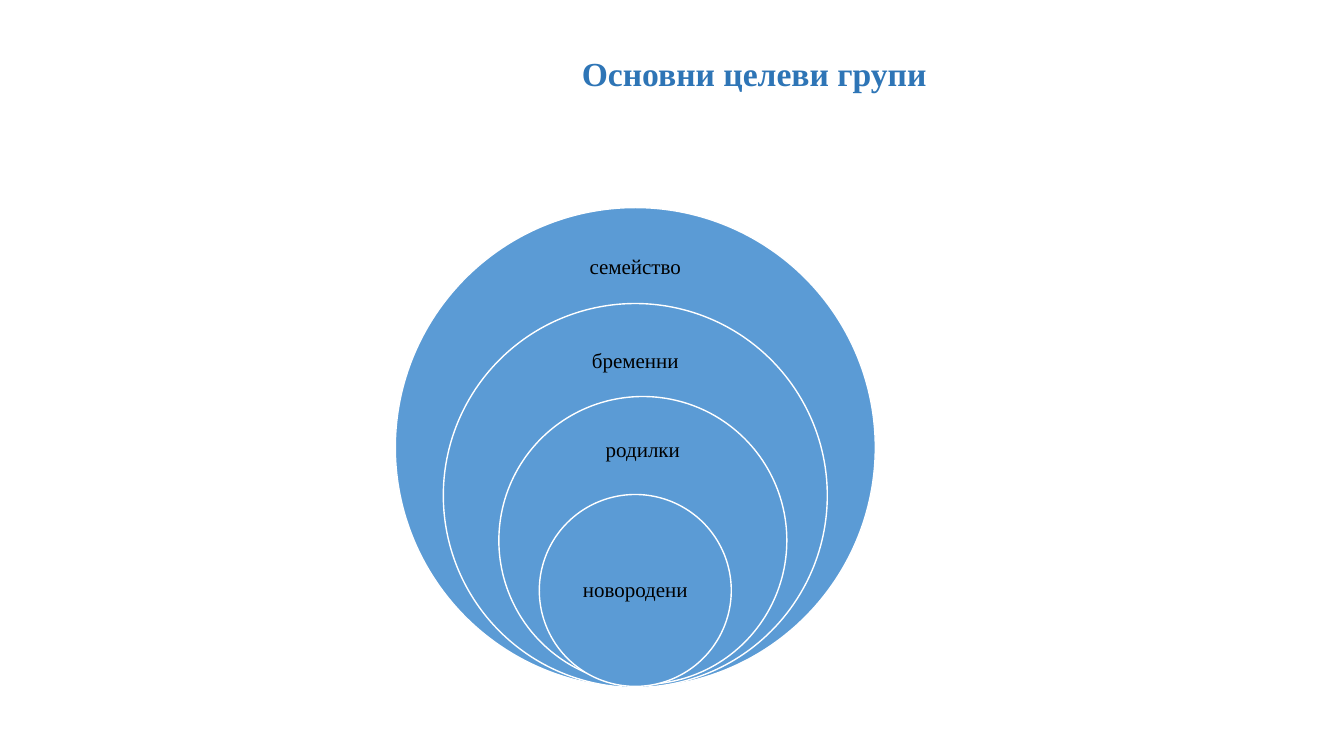
"""Builds a slide of nested circles showing the main target groups."""
from pptx import Presentation
from pptx import util as u
from pptx.dml import color
from pptx.enum import shapes, text

COLOURS = {"title": "2E75B6", "ring": "5B9BD5", "outline": "FFFFFF", "label": "000000"}
OUTER_DIAMETER = 63.47
RINGS = [
    ("семейство", 1.0, 47.27, 90.93, 35.4, 9.47),
    ("бременни", 0.8, 47.27, 90.93, 47.8, 9.2),
    ("родилки", 0.6, 47.83, 90.53, 59.6, 8.53),
    ("новородени", 0.4, 47.27, 90.8, 78.2, 12.67),
]


class SlideBuilder:
    """Holds the style and the slide; lengths are percentages of the slide's size."""

    font_name = "Times New Roman"

    def __init__(self, presentation):
        self.width = presentation.slide_width
        self.height = presentation.slide_height
        self.slide = presentation.slides.add_slide(presentation.slide_layouts[5])
        self.group = self.slide.shapes.add_group_shape()

    def across(self, share):
        return u.Emu(round(self.width * share / 100))

    def down(self, share):
        return u.Emu(round(self.height * share / 100))

    def set_wording(self, shape, wording, size, colour, bold=False):
        frame = shape.text_frame
        frame.text = wording
        frame.word_wrap = True
        frame.auto_size = text.MSO_AUTO_SIZE.NONE
        paragraph = frame.paragraphs[0]
        paragraph.alignment = text.PP_ALIGN.CENTER
        paragraph.line_spacing = 0.9
        for run in paragraph.runs:
            run.font.name = self.font_name
            run.font.size = u.Pt(size)
            run.font.bold = bold
            run.font.color.rgb = color.RGBColor.from_string(COLOURS[colour])
        return frame

    def title(self, wording, left, top, width, height):
        shape = self.slide.shapes.title
        shape.left, shape.top = self.across(left), self.down(top)
        shape.width, shape.height = self.across(width), self.down(height)
        frame = self.set_wording(shape, wording, 24, "title", bold=True)
        frame.vertical_anchor = text.MSO_ANCHOR.TOP
        frame.margin_top = u.Inches(0.17)

    def ring(self, centre, bottom, diameter):
        size = self.down(diameter)
        shape = self.group.shapes.add_shape(
            shapes.MSO_SHAPE.OVAL, self.across(centre) - size // 2,
            self.down(bottom) - size, size, size)
        shape.shadow.inherit = False
        shape.fill.solid()
        shape.fill.fore_color.rgb = color.RGBColor.from_string(COLOURS["ring"])
        shape.line.color.rgb = color.RGBColor.from_string(COLOURS["outline"])
        shape.line.width = u.Pt(1)

    def label(self, wording, centre, middle, height, width=10.1):
        shape = self.group.shapes.add_textbox(
            self.across(centre - width / 2), self.down(middle - height / 2),
            self.across(width), self.down(height))
        frame = self.set_wording(shape, wording, 15, "label")
        frame.vertical_anchor = text.MSO_ANCHOR.MIDDLE
        frame.margin_left = frame.margin_right = u.Inches(0.12)
        frame.margin_top = frame.margin_bottom = u.Inches(0.12)


def main():
    presentation = Presentation()
    presentation.slide_width = u.Inches(13.33)
    presentation.slide_height = u.Inches(7.5)
    builder = SlideBuilder(presentation)
    builder.title("Основни целеви групи", 19.05, 5.33, 74.12, 19.33)
    for wording, scale, centre, bottom, middle, height in RINGS:
        builder.ring(centre, bottom, OUTER_DIAMETER * scale)
        builder.label(wording, centre, middle, height)
    presentation.save("out.pptx")


if __name__ == "__main__":
    main()
